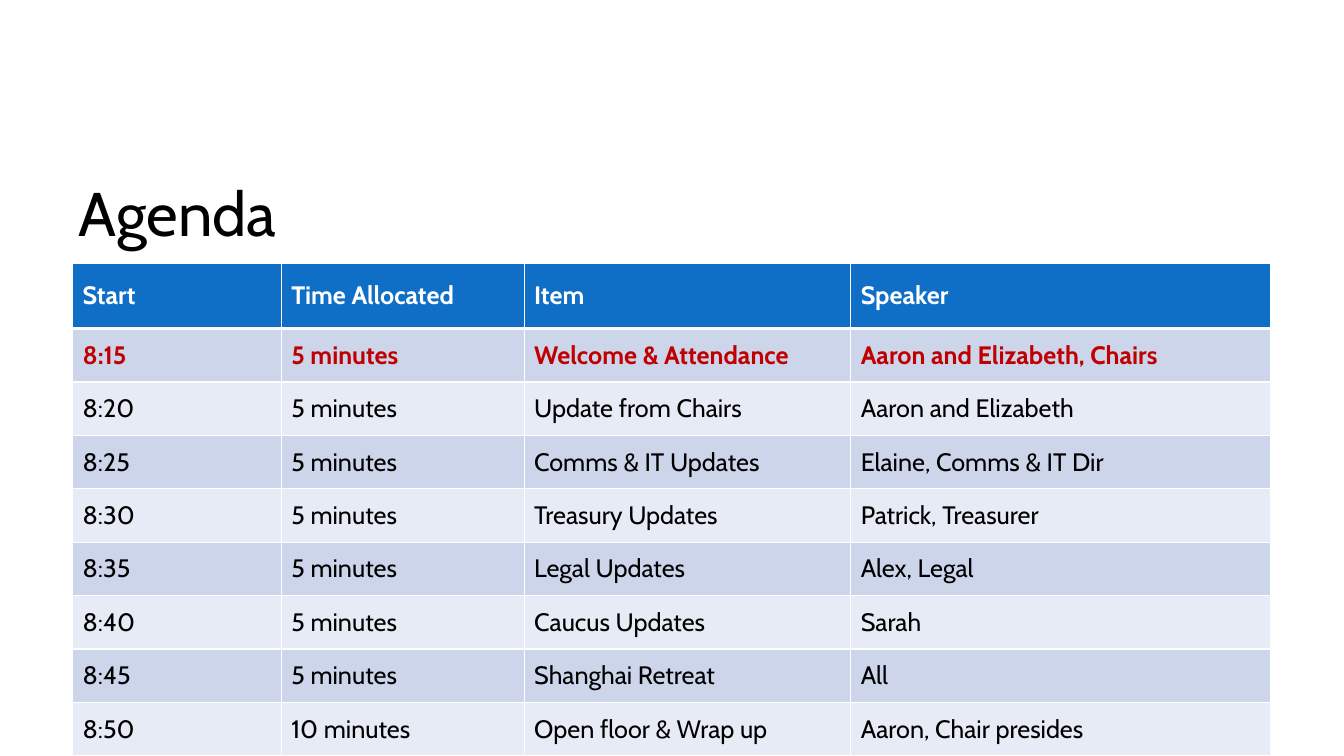
from lxml import etree
from pptx import Presentation
from pptx.dml.color import RGBColor
from pptx.enum import text
from pptx.oxml import ns
from pptx.util import Pt

FONT = "Cabin"
COLORS = {
    "header": "0F6FC6",
    "band_dark": "CCD5EA",
    "band_light": "E7EBF5",
    "white": "FFFFFF",
    "black": "000000",
    "current": "C00000",
}
COL_WIDTHS = [149.04, 173.52, 233.28, 300.24]
HEADER_HEIGHT, ROW_HEIGHT = 46.8, 38.16
AGENDA = [
    ("Start", "Time Allocated", "Item", "Speaker"),
    ("8:15", "5 minutes", "Welcome & Attendance", "Aaron and Elizabeth, Chairs"),
    ("8:20", "5 minutes", "Update from Chairs", "Aaron and Elizabeth"),
    ("8:25", "5 minutes", "Comms & IT Updates", "Elaine, Comms & IT Dir"),
    ("8:30", "5 minutes", "Treasury Updates", "Patrick, Treasurer"),
    ("8:35", "5 minutes", "Legal Updates", "Alex, Legal"),
    ("8:40", "5 minutes", "Caucus Updates", "Sarah"),
    ("8:45", "5 minutes", "Shanghai Retreat", "All"),
    ("8:50", "10 minutes", "Open floor & Wrap up", "Aaron, Chair presides"),
]


def rgb(name):
    return RGBColor.from_string(COLORS[name])


def add_run(p, words, size, color, bold=False):
    r = p.add_run()
    r.text = words
    r.font.name = FONT
    r.font.size = Pt(size)
    r.font.bold = bold
    r.font.color.rgb = rgb(color)


def add_title(slide, words):
    sp = slide.shapes.title
    sp.left, sp.top, sp.width, sp.height = Pt(48.96), Pt(102.24), Pt(749.52), Pt(104.4)
    tf = sp.text_frame
    tf.auto_size = text.MSO_AUTO_SIZE.NONE
    tf.vertical_anchor = text.MSO_ANCHOR.MIDDLE
    p = tf.paragraphs[0]
    p.alignment = text.PP_ALIGN.LEFT
    p.line_spacing = 0.9
    add_run(p, words, 44, "black")


def set_borders(cell, widths):
    tcPr = cell._tc.get_or_add_tcPr()
    for side, width in widths.items():
        ln = etree.SubElement(tcPr, ns.qn(f"a:ln{side}"), w=str(Pt(width)))
        fill = etree.SubElement(ln, ns.qn("a:solidFill"))
        etree.SubElement(fill, ns.qn("a:srgbClr"), val=COLORS["white"])


def row_style(row):
    if row == 0:
        return "header", "white", True
    band = "band_dark" if row % 2 else "band_light"
    return (band, "current", True) if row == 1 else (band, "black", False)


def fill_cell(cell, words, row):
    fill, color, bold = row_style(row)
    set_borders(cell, {"L": 1, "R": 1, "T": 3 if row == 1 else 1, "B": 3 if row == 0 else 1})
    cell.fill.solid()
    cell.fill.fore_color.rgb = rgb(fill)
    cell.vertical_anchor = text.MSO_ANCHOR.MIDDLE
    add_run(cell.text_frame.paragraphs[0], words, 18, color, bold)


def add_agenda(slide):
    heights = [HEADER_HEIGHT] + [ROW_HEIGHT] * (len(AGENDA) - 1)
    frame = slide.shapes.add_table(len(AGENDA), len(COL_WIDTHS), Pt(51.84), Pt(187.92),
                                   Pt(sum(COL_WIDTHS)), Pt(sum(heights)))
    table = frame.table
    for column, width in zip(table.columns, COL_WIDTHS):
        column.width = Pt(width)
    for i, (entries, height) in enumerate(zip(AGENDA, heights)):
        table.rows[i].height = Pt(height)
        for j, words in enumerate(entries):
            fill_cell(table.cell(i, j), words, i)


def main():
    prs = Presentation()
    prs.slide_width, prs.slide_height = Pt(960), Pt(540)
    slide = prs.slides.add_slide(prs.slide_layouts[5])
    add_title(slide, "Agenda")
    add_agenda(slide)
    prs.save("out.pptx")


if __name__ == "__main__":
    main()
